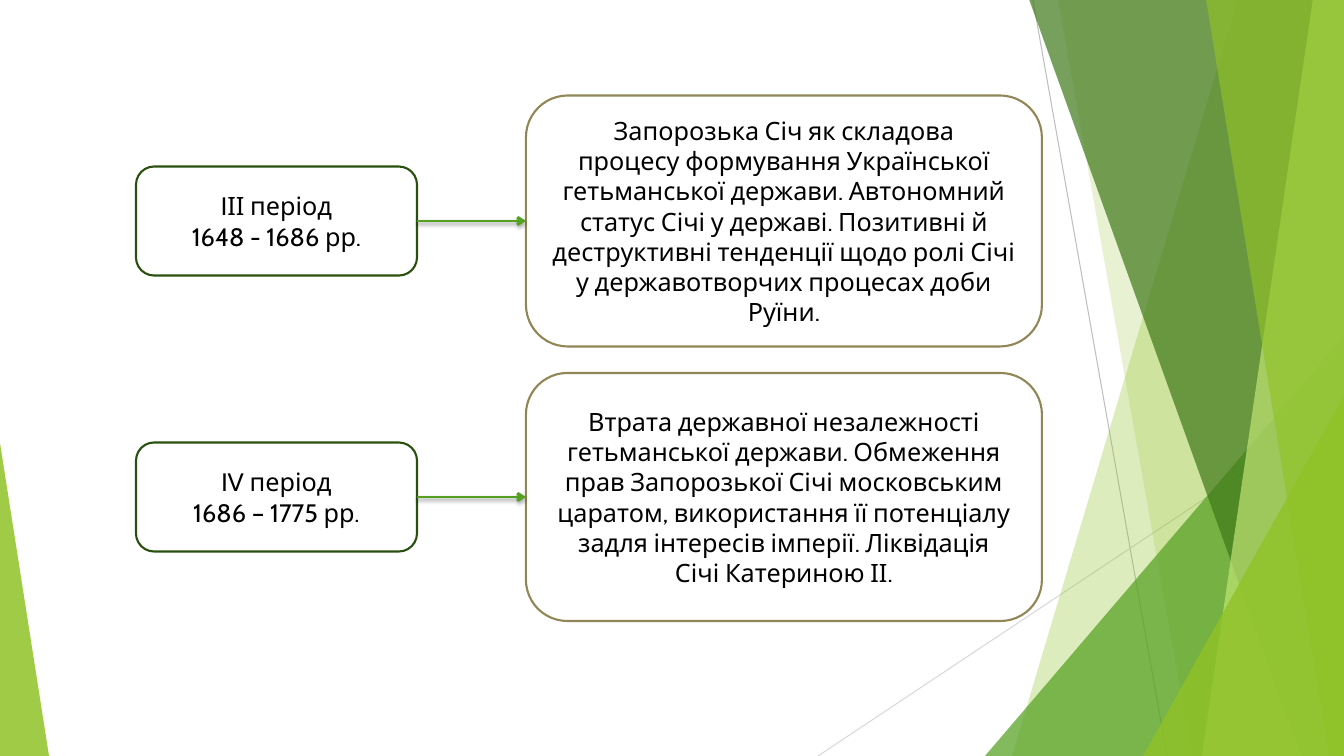
from lxml import etree
from pptx import Presentation
from pptx import util as u
from pptx.dml.color import RGBColor
from pptx.enum import shapes, text
from pptx.oxml.ns import qn

WIDE, HIGH = 1344, 756
FORM = shapes.MSO_SHAPE


def px(n):
    return u.Emu(round(n * 914400 / 100.8))


def hue(code):
    return RGBColor.from_string(code)


def sub(node, tag, **attrs):
    return etree.SubElement(node, qn(tag), attrs)


class Deck:
    font, size, ink = "Cabin", 18, "000000"

    def __init__(self):
        self.prs = Presentation()
        self.prs.slide_width, self.prs.slide_height = px(WIDE), px(HIGH)
        self.slide = self.prs.slides.add_slide(self.prs.slide_layouts[6])
        self.items = self.slide.shapes

    def tint(self, shape, color, alpha):
        shape.shadow.inherit = False
        shape.fill.solid()
        shape.fill.fore_color.rgb = hue(color)
        shape.line.fill.background()
        tone = shape._element.spPr.find(qn("a:solidFill"))[0]
        sub(tone, "a:alpha", val=str(alpha * 1000))

    def band(self, top, base, color, alpha):
        """Slanted band that reaches the right edge of the slide."""
        pen = self.items.build_freeform(px(top), px(-1))
        pen.add_line_segments(
            [(px(x), px(y)) for x, y in ((WIDE, -1), (WIDE, HIGH), (base, HIGH))])
        self.tint(pen.convert_to_shape(), color, alpha)

    def wedge(self, left, top, width, peak, color, alpha):
        """Right triangle that stands on the bottom edge."""
        shape = self.items.add_shape(FORM.ISOSCELES_TRIANGLE, px(left), px(top),
                                     px(width), px(HIGH - top))
        shape.adjustments[0] = peak
        self.tint(shape, color, alpha)

    def line(self, x1, y1, x2, y2, color, width):
        link = self.items.add_connector(shapes.MSO_CONNECTOR.STRAIGHT,
                                        px(x1), px(y1), px(x2), px(y2))
        link.line.color.rgb = hue(color)
        link.line.width = u.Pt(width)
        return link, sub(link._element.spPr, "a:effectLst")

    def arrow(self, x1, x2, y, color):
        link, effects = self.line(x1, y, x2, y, color, 2)
        sub(link._element.spPr.find(qn("a:ln")), "a:tailEnd", type="arrow")
        shade = sub(effects, "a:outerShdw", blurRad=str(u.Pt(3)),
                    dist=str(u.Pt(2)), dir="5400000", rotWithShape="0")
        sub(sub(shade, "a:srgbClr", val="000000"), "a:alpha", val="35000")

    def box(self, left, mid, width, height, color, lines):
        """Rounded box centred on the height mid, one paragraph a line."""
        shape = self.items.add_shape(FORM.ROUNDED_RECTANGLE, px(left),
                                     px(mid - height / 2), px(width), px(height))
        shape.shadow.inherit = False
        shape.fill.solid()
        shape.fill.fore_color.rgb = hue("FFFFFF")
        shape.line.color.rgb = hue(color)
        shape.line.width = u.Pt(1.5)
        frame = shape.text_frame
        frame.word_wrap = True
        frame.vertical_anchor = text.MSO_ANCHOR.MIDDLE
        frame.text = "\n".join(lines)
        for para in frame.paragraphs:
            para.alignment = text.PP_ALIGN.CENTER
            para.font.name, para.font.size = self.font, u.Pt(self.size)
            para.font.color.rgb = hue(self.ink)


PERIODS = [
    (221, 251, ["IІІ період", "1648 - 1686 рр."],
     ["Запорозька Січ як складова",
      "процесу формування Української",
      "гетьманської держави. Автономний",
      "статус Січі у державі. Позитивні й",
      "деструктивні тенденції щодо ролі Січі",
      "у державотворчих процесах доби",
      "Руїни."]),
    (497, 248, ["IV період", "1686 – 1775 рр."],
     ["Втрата державної незалежності",
      "гетьманської держави. Обмеження",
      "прав Запорозької Січі московським",
      "царатом, використання її потенціалу",
      "задля інтересів імперії. Ліквідація",
      "Січі Катериною ІІ."]),
]


def main():
    deck = Deck()

    # Backdrop of thin lines and green facets
    deck.line(1033, 0, 1167, HIGH, "BFBFBF", 0.75)
    deck.line(WIDE, 406, 818, HIGH, "D9D9D9", 0.75)
    deck.band(1238, 1012, "90C226", 30)
    deck.band(1058, 1192, "90C226", 20)
    deck.wedge(985, 336, 359, 1, "54A021", 72)
    deck.band(1029, 1301, "3F7819", 70)
    deck.band(1313, 1202, "C0E474", 70)
    deck.band(1206, 1329, "90C226", 65)
    deck.wedge(1143, 396, 201, 1, "90C226", 80)
    deck.wedge(0, 443, 49, 0, "90C226", 85)

    # Periods, each with its meaning
    for mid, height, dates, story in PERIODS:
        deck.box(136, mid, 281, 109, "2A5010", dates)
        deck.box(526, mid, 516, height, "918655", story)
        deck.arrow(417, 526, mid, "54A021")

    deck.prs.save("out.pptx")


if __name__ == "__main__":
    main()
